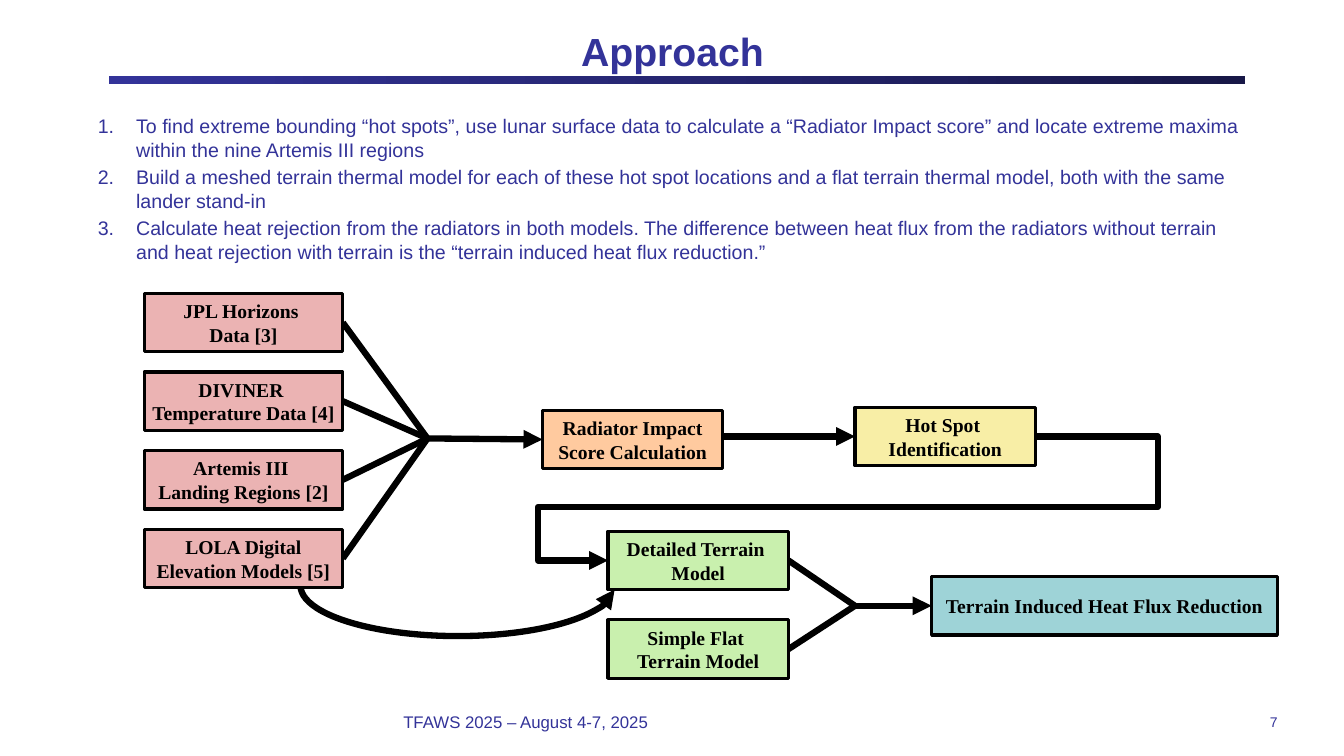
from dataclasses import dataclass
from typing import Optional

from pptx import Presentation
from pptx.dml.color import RGBColor
from pptx.enum import shapes, text
from pptx.oxml import ns, xmlchemy
from pptx.util import Inches, Pt

NAVY = "333399"
BLACK = "000000"
PINK, ORANGE, YELLOW = "EBB3B3", "FFCA9F", "F8EEA6"
GREEN, TEAL = "C9F0AE", "9ED3D7"
BOX_HEIGHT = 0.58
INPUT_LEFT, INPUT_TOP, INPUT_WIDTH, INPUT_STEP = 1.43, 2.91, 1.97, 0.78
STEP_WIDTH = 1.79


@dataclass
class Box:
    label: str
    left: float
    top: float
    width: float
    fill: str


@dataclass
class Link:
    start: tuple[float, float]
    end: tuple[float, float]
    arrow: bool = False
    bend: Optional[float] = None


INPUTS = [
    "JPL Horizons \nData [3]",
    "DIVINER \nTemperature Data [4]",
    "Artemis III \nLanding Regions [2]",
    "LOLA Digital\nElevation Models [5]",
]
BOXES = [
    Box(label, INPUT_LEFT, INPUT_TOP + INPUT_STEP * row, INPUT_WIDTH, PINK)
    for row, label in enumerate(INPUTS)
] + [
    Box("Radiator Impact\nScore Calculation", 5.38, 4.07, STEP_WIDTH, ORANGE),
    Box("Hot Spot \nIdentification", 8.48, 4.04, STEP_WIDTH, YELLOW),
    Box("Terrain Induced Heat Flux Reduction", 9.24, 5.72, 3.43, TEAL),
    Box("Detailed Terrain \nModel", 6.03, 5.27, STEP_WIDTH, GREEN),
    Box("Simple Flat \nTerrain Model", 6.03, 6.15, STEP_WIDTH, GREEN),
]

INPUT_JOIN = (4.24, 4.35)
MODEL_JOIN = (8.48, 6.01)
LINKS = [
    Link((box.left + box.width, box.top + BOX_HEIGHT / 2), INPUT_JOIN)
    for box in BOXES[:len(INPUTS)]
] + [
    Link(INPUT_JOIN, (5.38, 4.36), arrow=True),
    Link((7.17, 4.33), (8.48, 4.33), arrow=True),
    Link((10.27, 4.33), (5.49, 5.03), bend=-0.254),
    Link((5.49, 5.03), (6.03, 5.56), arrow=True, bend=-0.287),
    Link((7.82, 5.56), MODEL_JOIN),
    Link((7.82, 6.44), MODEL_JOIN),
    Link(MODEL_JOIN, (9.24, 6.01), arrow=True),
]

STEPS = [
    "To find extreme bounding “hot spots”, use lunar surface data to calculate a "
    "“Radiator Impact score” and locate extreme maxima within the nine Artemis III regions",
    "Build a meshed terrain thermal model for each of these hot spot locations and a flat "
    "terrain thermal model, both with the same lander stand-in",
    "Calculate heat rejection from the radiators in both models. The difference between heat "
    "flux from the radiators without terrain and heat rejection with terrain is the "
    "“terrain induced heat flux reduction.”",
]


def color(value: str) -> RGBColor:
    return RGBColor.from_string(value)


def place(shape, left: float, top: float, width: float, height: float) -> None:
    shape.left, shape.top = Inches(left), Inches(top)
    shape.width, shape.height = Inches(width), Inches(height)


def format_text(text_frame, size: float, name: str, fill: str, bold: bool, align) -> None:
    for paragraph in text_frame.paragraphs:
        paragraph.alignment = align
        for run in paragraph.runs:
            run.font.size, run.font.name, run.font.bold = Pt(size), name, bold
            run.font.color.rgb = color(fill)


def set_margins(text_frame, side: float, edge: float) -> None:
    text_frame.margin_left = text_frame.margin_right = Inches(side)
    text_frame.margin_top = text_frame.margin_bottom = Inches(edge)


def add_element(parent, tag: str, **attributes: str):
    element = xmlchemy.OxmlElement(tag)
    for key, value in attributes.items():
        element.set(key, value)
    parent.append(element)
    return element


def style_flow_line(shape, arrow_tag: Optional[str]) -> None:
    shape.line.color.rgb = color(BLACK)
    shape.line.width = Pt(4.5)
    if arrow_tag:
        add_element(shape.line._get_or_add_ln(), arrow_tag, type="triangle")


def add_link(slide, link: Link) -> None:
    kind = shapes.MSO_CONNECTOR.STRAIGHT if link.bend is None else shapes.MSO_CONNECTOR.ELBOW
    connector = slide.shapes.add_connector(
        kind, *(Inches(value) for value in link.start + link.end))
    style_flow_line(connector, "a:tailEnd" if link.arrow else None)
    properties = connector._element.spPr
    add_element(properties, "a:effectLst")
    if link.bend is not None:
        guides = properties.find(ns.qn("a:prstGeom")).get_or_add_avLst()
        add_element(guides, "a:gd", name="adj1", fmla=f"val {round(link.bend * 100000)}")


def add_preset(slide, kind, left: float, top: float, width: float, height: float):
    shape = slide.shapes.add_shape(
        kind, Inches(left), Inches(top), Inches(width), Inches(height))
    shape.shadow.inherit = False
    return shape


def add_box(slide, box: Box) -> None:
    shape = add_preset(slide, shapes.MSO_SHAPE.RECTANGLE,
                       box.left, box.top, box.width, BOX_HEIGHT)
    shape.fill.solid()
    shape.fill.fore_color.rgb = color(box.fill)
    shape.line.color.rgb = color(BLACK)
    shape.line.width = Pt(2.25)
    shape.text_frame.text = box.label
    shape.text_frame.word_wrap = False
    shape.text_frame.vertical_anchor = text.MSO_ANCHOR.MIDDLE
    format_text(shape.text_frame, 14, "Times New Roman", BLACK, True, text.PP_ALIGN.CENTER)


def add_title_bar(slide) -> None:
    bar = add_preset(slide, shapes.MSO_SHAPE.RECTANGLE, 1.08, 0.75, 11.27, 0.08)
    bar.fill.gradient()
    bar.fill.gradient_angle = 0
    for stop, value in zip(bar.fill.gradient_stops, (NAVY, "181847")):
        stop.color.rgb = color(value)
    bar.line.fill.background()


def add_curve(slide) -> None:
    """Draw the arrow from the elevation models to the detailed terrain."""
    arc = add_preset(slide, shapes.MSO_SHAPE.ARC, 2.98, 5.31, 3.12, 1)
    arc.rotation = 180
    arc.adjustments[0] = 108.845
    arc.adjustments[1] = 0
    arc.fill.background()
    style_flow_line(arc, "a:headEnd")


def fill_title(title) -> None:
    place(title, 0.67, 0.21, 12, 0.58)
    title.text_frame.text = "Approach"
    title.text_frame.vertical_anchor = text.MSO_ANCHOR.MIDDLE
    set_margins(title.text_frame, 0.1, 0)
    format_text(title.text_frame, 28, "Arial", NAVY, True, text.PP_ALIGN.CENTER)


def fill_steps(body) -> None:
    place(body, 0.87, 1.08, 11.6, 1.71)
    body.text_frame.text = "\n".join(STEPS)
    for index, paragraph in enumerate(body.text_frame.paragraphs):
        paragraph.space_before = Pt(2.8 if index else 0)
        properties = paragraph._p.get_or_add_pPr()
        properties.set("marL", str(Inches(0.38)))
        properties.set("indent", str(-Inches(0.38)))
        add_element(properties, "a:buFont", typeface="+mj-lt")
        add_element(properties, "a:buAutoNum", type="arabicPeriod")
    format_text(body.text_frame, 14, "Arial", NAVY, False, text.PP_ALIGN.LEFT)


def add_footer(slide, label: str, left: float, width: float, size: float, align) -> None:
    footer = slide.shapes.add_textbox(Inches(left), Inches(7), Inches(width), Inches(0.33))
    footer.text_frame.text = label
    footer.text_frame.word_wrap = True
    footer.text_frame.vertical_anchor = text.MSO_ANCHOR.MIDDLE
    set_margins(footer.text_frame, 0, 0)
    format_text(footer.text_frame, size, "Arial", NAVY, False, align)


def main() -> None:
    presentation = Presentation()
    presentation.slide_width, presentation.slide_height = Inches(13.33), Inches(7.5)
    slide = presentation.slides.add_slide(presentation.slide_layouts[1])
    add_title_bar(slide)
    add_curve(slide)
    fill_title(slide.shapes.title)
    fill_steps(slide.placeholders[1])
    add_footer(slide, "TFAWS 2025 – August 4-7, 2025", 4, 5.33, 12, text.PP_ALIGN.LEFT)
    add_footer(slide, "7", 9.89, 2.78, 10, text.PP_ALIGN.RIGHT)
    for link in LINKS:
        add_link(slide, link)
    for box in BOXES:
        add_box(slide, box)
    presentation.save("out.pptx")


if __name__ == "__main__":
    main()
